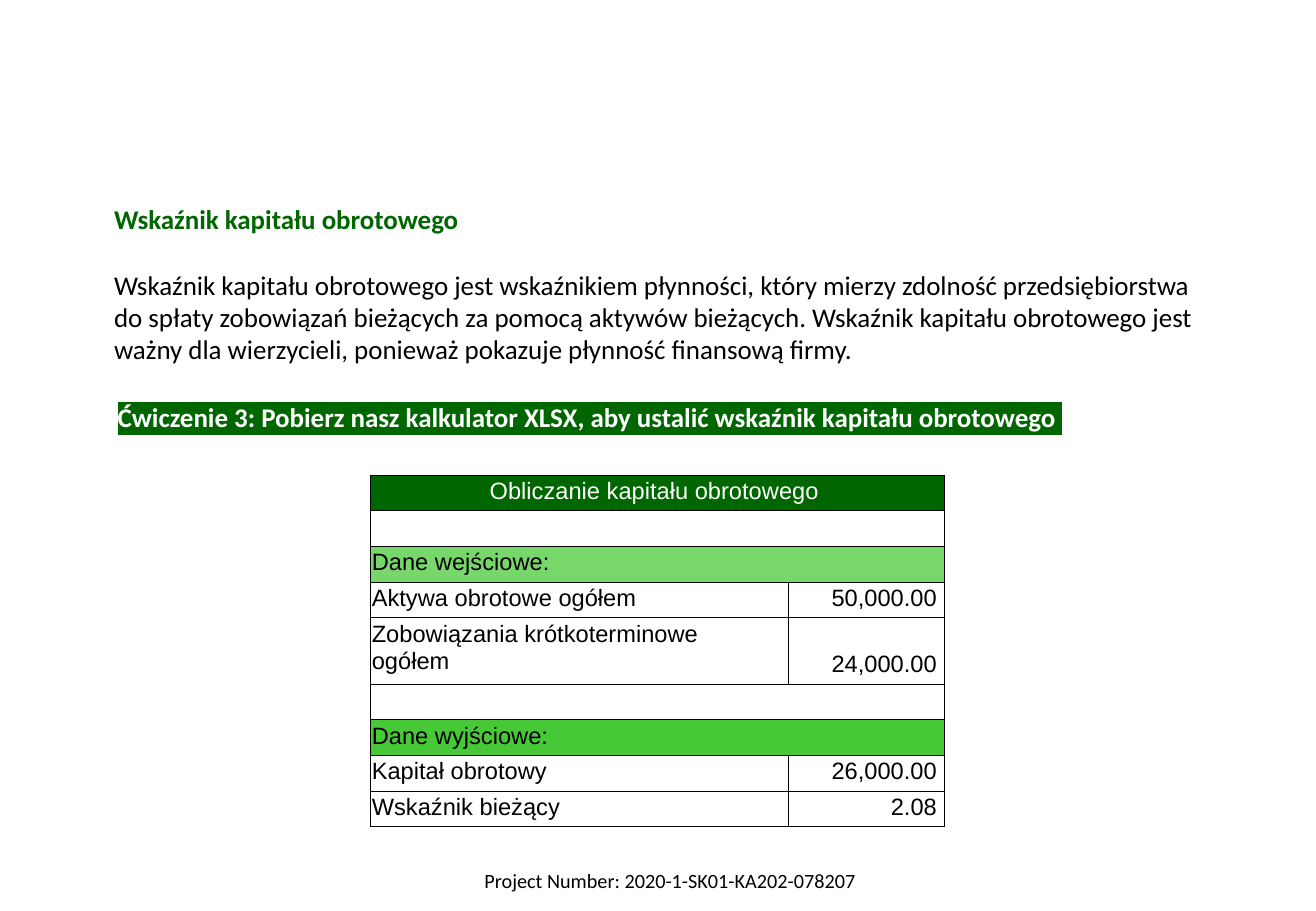
import pptx
import pptx.util
import pptx.dml.color
import pptx.enum.text
import pptx.oxml
import pptx.oxml.ns

Inches = pptx.util.Inches
Pt = pptx.util.Pt
ALIGN = pptx.enum.text.PP_ALIGN
ANCHOR = pptx.enum.text.MSO_ANCHOR
NS = pptx.oxml.ns.nsdecls("a")
GREEN = "006600"
BLACK = "000000"
WHITE = "FFFFFF"

HEAD = "Wskaźnik kapitału obrotowego"
BODY = (
    "Wskaźnik kapitału obrotowego jest wskaźnikiem płynności, który mierzy "
    "zdolność przedsiębiorstwa do spłaty zobowiązań bieżących za pomocą aktywów "
    "bieżących. Wskaźnik kapitału obrotowego jest ważny dla wierzycieli, ponieważ "
    "pokazuje płynność finansową firmy."
)
TASK = "Ćwiczenie 3: Pobierz nasz kalkulator XLSX, aby ustalić wskaźnik kapitału obrotowego "
ROWS = [
    ("Obliczanie kapitału obrotowego", None, GREEN),
    ("", None, None),
    ("Dane wejściowe:", None, "78D76B"),
    ("Aktywa obrotowe ogółem", "50,000.00", None),
    ("Zobowiązania krótkoterminowe ogółem", "24,000.00", None),
    ("", None, None),
    ("Dane wyjściowe:", None, "47C836"),
    ("Kapitał obrotowy", "26,000.00", None),
    ("Wskaźnik bieżący", "2.08", None),
]
TALL = 4


def color(code):
    """Turn a hex string into a colour."""
    return pptx.dml.color.RGBColor.from_string(code)


def add_run(para, text, size, code, font="Calibri", bold=False, mark=None):
    """Add one styled run, with an optional highlight."""
    run = para.add_run()
    run.text = text
    run.font.size = Pt(size)
    run.font.bold = bold
    run.font.color.rgb = color(code)
    if mark:
        fill = run.font._element.find(pptx.oxml.ns.qn("a:solidFill"))
        fill.addnext(pptx.oxml.parse_xml(
            f'<a:highlight {NS}><a:srgbClr val="{mark}"/></a:highlight>'))
    run.font.name = font


def add_box(slide, box, wrap=True):
    """Add a text box and return its frame."""
    frame = slide.shapes.add_textbox(*map(Inches, box)).text_frame
    frame.word_wrap = wrap
    return frame


def add_intro(slide, box):
    """Place the heading and the paragraph below it."""
    frame = add_box(slide, box)
    add_run(frame.paragraphs[0], HEAD, 16, GREEN, bold=True)
    para = frame.add_paragraph()
    para.space_before = Pt(19.5)
    add_run(para, BODY, 16, BLACK)


def add_task(slide, box):
    """Place the highlighted exercise line."""
    para = add_box(slide, box).paragraphs[0]
    add_run(para, TASK, 16, WHITE, bold=True, mark=GREEN)


def add_footer(slide, box):
    """Place the centred project number."""
    para = add_box(slide, box, wrap=False).paragraphs[0]
    para.alignment = ALIGN.CENTER
    add_run(para, "Project Number: 2020-1-SK01-KA202-078207", 12, BLACK)


def style_cell(cell, fill):
    """Set the margins, borders and fill of a cell."""
    cell.margin_left = cell.margin_top = Inches(0.01)
    cell.margin_right = Inches(0.06)
    cell.margin_bottom = Inches(0.05)
    cell.vertical_anchor = ANCHOR.BOTTOM
    props = cell._tc.get_or_add_tcPr()
    for spot, side in enumerate("LRTB"):
        props.insert(spot, pptx.oxml.parse_xml(
            f'<a:ln{side} {NS} w="6350"><a:solidFill><a:srgbClr val="{BLACK}"/>'
            f'</a:solidFill></a:ln{side}>'))
    if fill:
        cell.fill.solid()
        cell.fill.fore_color.rgb = color(fill)
    else:
        cell.fill.background()


def fill_cell(cell, text, code, align):
    """Write a cell, or keep an empty one at the text size."""
    para = cell.text_frame.paragraphs[0]
    para.alignment = align
    if text:
        add_run(para, text, 14, code, "Arial")
    else:
        para._p.append(pptx.oxml.parse_xml(f'<a:endParaRPr {NS} sz="1400"/>'))


def add_sums(slide, box):
    """Place the working capital table."""
    table = slide.shapes.add_table(len(ROWS), 2, *map(Inches, box)).table
    table.first_row = table.horz_banding = False
    width, height = box[2:]
    tall = 0.52
    for col, size in zip(table.columns, (3.44, width - 3.44)):
        col.width = Inches(size)
    for i, (label, value, fill) in enumerate(ROWS):
        table.rows[i].height = Inches(
            tall if i == TALL else (height - tall) / (len(ROWS) - 1))
        left, right = table.cell(i, 0), table.cell(i, 1)
        for cell in (left, right):
            style_cell(cell, fill)
        title = i == 0
        fill_cell(left, label, WHITE if title else BLACK,
                  ALIGN.CENTER if title else ALIGN.LEFT)
        fill_cell(right, value, BLACK, ALIGN.RIGHT)
        if value is None:
            left.merge(right)
    label = table.cell(TALL, 0)
    label.vertical_anchor = ANCHOR.TOP
    label.margin_top = Inches(0.03)


def main():
    """Build the slide and save it."""
    deck = pptx.Presentation()
    deck.slide_width = Inches(10.83)
    deck.slide_height = Inches(7.5)
    slide = deck.slides.add_slide(deck.slide_layouts[6])
    add_footer(slide, (3.74, 7.1, 3.55, 0.3))
    add_intro(slide, (0.84, 1.62, 9.15, 1.71))
    add_task(slide, (0.87, 3.25, 9.15, 0.36))
    add_sums(slide, (3.05, 3.91, 4.72, 2.81))
    deck.save("out.pptx")


if __name__ == "__main__":
    main()
